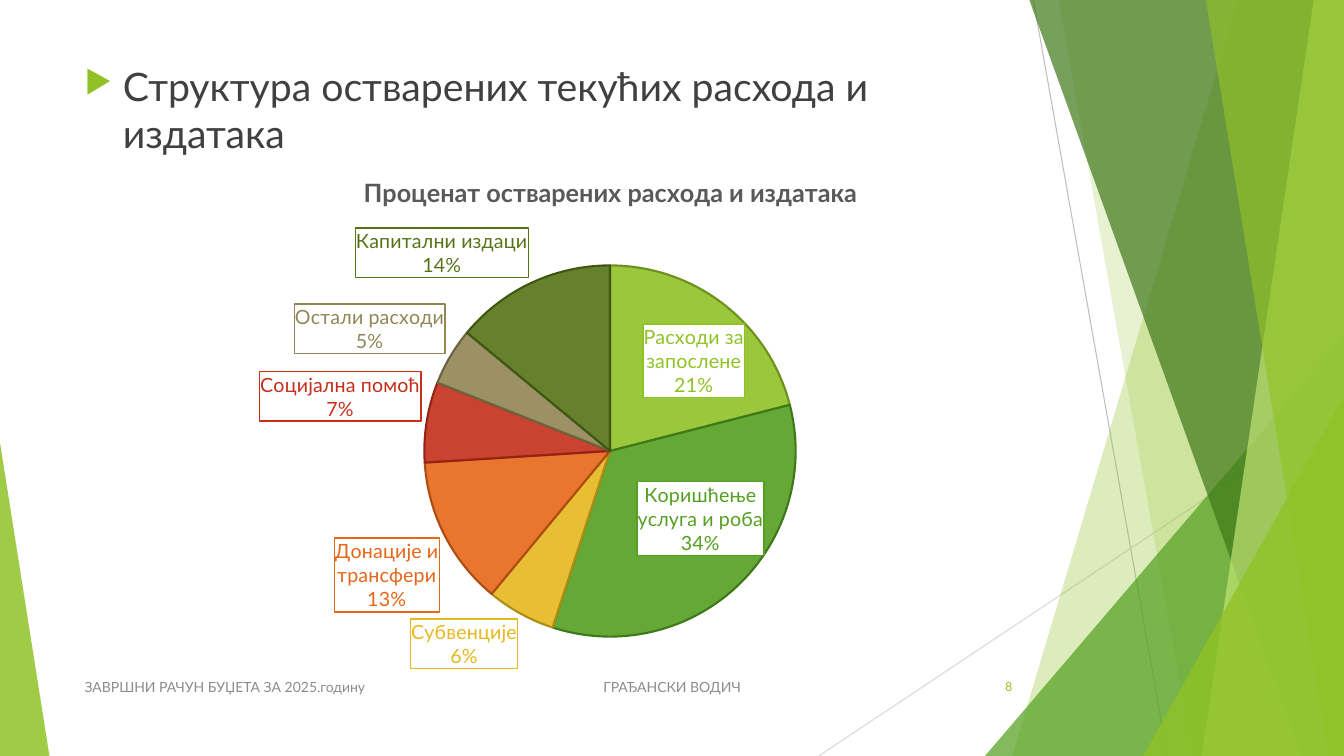
from pptx import Presentation
from pptx.chart.data import CategoryChartData
from pptx.dml.color import RGBColor
from pptx.enum.chart import XL_CHART_TYPE
from pptx.enum.shapes import MSO_CONNECTOR, MSO_SHAPE
from pptx.enum.text import MSO_ANCHOR, MSO_AUTO_SIZE, PP_ALIGN
from pptx.oxml import parse_xml
from pptx.oxml.ns import nsdecls, qn
from pptx.util import Inches, Pt
from lxml import etree

PIE = XL_CHART_TYPE.PIE
STRAIGHT = MSO_CONNECTOR.STRAIGHT
TRIANGLE = MSO_SHAPE.ISOSCELES_TRIANGLE
LEFT, RIGHT = PP_ALIGN.LEFT, PP_ALIGN.RIGHT
TOP, MIDDLE = MSO_ANCHOR.TOP, MSO_ANCHOR.MIDDLE
NO_AUTOFIT = MSO_AUTO_SIZE.NONE

WIDTH, HEIGHT = Inches(13.33), Inches(7.5)
FONT = "Lato"
COLORS = {
    "lime": "90C226", "green": "54A021", "forest": "3F7819", "pale": "C0E474",
    "yellow": "E6B91E", "orange": "E76618", "red": "C42F1A", "khaki": "918655",
    "olive": "567417", "heading": "404040", "chart title": "595959",
    "footer": "8C8C8C", "thin line": "BFBFBF", "faint line": "D9D9D9",
}
# Category, percentage, colour, label position, label shift as shares of the chart
EXPENSES = [
    ("Расходи за запослене", 21, "lime", "ctr", (0.03, -0.03)),
    ("Коришћење услуга и роба", 34, "green", "ctr", (0.03, 0)),
    ("Субвенције", 6, "yellow", "outEnd", (0, 0)),
    ("Донације и трансфери", 13, "orange", "outEnd", (0, 0)),
    ("Социјална помоћ", 7, "red", "outEnd", (0, 0)),
    ("Остали расходи", 5, "khaki", "outEnd", (0, 0)),
    ("Капитални издаци", 14, "olive", "outEnd", (0, 0)),
]


def across(percent):
    return round(WIDTH * percent / 100)


def down(percent):
    return round(HEIGHT * percent / 100)


def area(left, top, width, height):
    """Turn percentages of the slide into a position and a size."""
    return across(left), down(top), across(width), down(height)


def rgb(name):
    return RGBColor.from_string(COLORS[name])


def set_fill(fill, color, opacity):
    fill.solid()
    fill.fore_color.rgb = rgb(color)
    solid = fill._xPr.find(qn("a:solidFill"))
    etree.SubElement(solid[0], qn("a:alpha"), val=str(opacity * 1000))


def style_facet(shape, color, opacity):
    shape.shadow.inherit = False
    set_fill(shape.fill, color, opacity)
    shape.line.fill.background()


def add_line(page, start, end, color):
    line = page.shapes.add_connector(
        STRAIGHT, across(start[0]), down(start[1]), across(end[0]), down(end[1]))
    line.line.color.rgb = rgb(color)
    line.line.width = Pt(0.75)
    etree.SubElement(line._element.spPr, qn("a:effectLst"))


def add_band(page, top_left, bottom_left, color, opacity):
    """Draw a full-height band that reaches the right edge of the slide."""
    builder = page.shapes.build_freeform(across(top_left), 0)
    builder.add_line_segments(
        [(WIDTH, 0), (WIDTH, HEIGHT), (across(bottom_left), HEIGHT)], close=True)
    style_facet(builder.convert_to_shape(), color, opacity)


def add_triangle(page, place, apex, color, opacity):
    triangle = page.shapes.add_shape(TRIANGLE, *area(*place))
    triangle.adjustments[0] = apex
    style_facet(triangle, color, opacity)


def add_decoration(page):
    add_line(page, (76.89, 0), (86.87, 100), "thin line")
    add_line(page, (100, 53.73), (60.92, 100), "faint line")
    add_band(page, 92.12, 75.32, "lime", 30)
    add_band(page, 78.77, 88.75, "lime", 20)
    add_triangle(page, (73.29, 44.4, 26.71, 55.6), 1, "green", 72)
    add_band(page, 76.59, 96.85, "forest", 70)
    add_band(page, 97.75, 89.42, "pale", 70)
    add_band(page, 89.72, 98.87, "lime", 65)
    add_triangle(page, (85.07, 52.4, 14.93, 47.6), 1, "lime", 80)
    add_triangle(page, (0, 58.53, 3.68, 41.47), 0, "lime", 85)


def style_font(font, size, color, bold=False):
    font.name, font.size, font.bold = FONT, Pt(size), bold
    font.color.rgb = rgb(color)


def write_heading(page, text):
    title = page.shapes.title
    title.left, title.top, title.width, title.height = area(5.55, 7.6, 70.52, 80.53)
    frame = title.text_frame
    frame.text = text
    frame.auto_size, frame.vertical_anchor = NO_AUTOFIT, TOP
    para = frame.paragraphs[0]
    para.alignment = LEFT
    properties = para._p.get_or_add_pPr()
    indent = Inches(0.38)
    properties.set("marL", str(indent))
    properties.set("indent", str(-indent))
    color = etree.SubElement(properties, qn("a:buClr"))
    etree.SubElement(color, qn("a:srgbClr"), val=COLORS["lime"])
    etree.SubElement(properties, qn("a:buSzPct"), val="80000")
    etree.SubElement(properties, qn("a:buChar"), char="▶")
    style_font(para.font, 28, "heading")


def add_small_text(page, place, text, size, color, alignment=LEFT, tab=None):
    box = page.shapes.add_textbox(*area(*place))
    frame = box.text_frame
    frame.word_wrap, frame.vertical_anchor = True, MIDDLE
    para = frame.paragraphs[0]
    para.text, para.alignment = text, alignment
    if tab:
        tabs = etree.SubElement(para._p.get_or_add_pPr(), qn("a:tabLst"))
        etree.SubElement(tabs, qn("a:tab"), pos=str(across(tab)), algn="l")
    style_font(para.font, size, color)


def layout_xml(x, y, size=None):
    """Describe a chart layout; with a size it is the inner plot area."""
    target = modes = extent = ""
    if size:
        target = '<c:layoutTarget val="inner"/>'
        extent = f'<c:w val="{size[0]}"/><c:h val="{size[1]}"/>'
    if size or x > 0.1:
        modes = '<c:xMode val="edge"/><c:yMode val="edge"/>'
    return (f'<c:layout {nsdecls("c")}><c:manualLayout>{target}{modes}'
            f'<c:x val="{x}"/><c:y val="{y}"/>{extent}</c:manualLayout></c:layout>')


def label_xml(index, color, position, shift):
    paint = f'<a:solidFill><a:srgbClr val="{COLORS[color]}"/></a:solidFill>'
    layout = layout_xml(*shift) if any(shift) else ""
    return f'''<c:dLbl><c:idx val="{index}"/>{layout}
      <c:spPr><a:solidFill><a:srgbClr val="FFFFFF"/></a:solidFill>
        <a:ln w="12700">{paint}</a:ln></c:spPr>
      <c:txPr><a:bodyPr wrap="square"/><a:p><a:pPr><a:defRPr sz="1400" b="0">{paint}
        <a:latin typeface="{FONT}"/></a:defRPr></a:pPr></a:p></c:txPr>
      <c:dLblPos val="{position}"/>{LABEL_CONTENT}</c:dLbl>'''


LABEL_CONTENT = '''<c:showLegendKey val="0"/><c:showVal val="0"/>
  <c:showCatName val="1"/><c:showSerName val="0"/><c:showPercent val="1"/>
  <c:showBubbleSize val="0"/><c:separator>\n</c:separator>'''


def replace_layout(parent, layout, before):
    for old in parent.findall(qn("c:layout")):
        parent.remove(old)
    parent.find(qn(before)).addprevious(parse_xml(layout))


def add_expense_pie(page):
    data = CategoryChartData()
    data.categories = [expense[0] for expense in EXPENSES]
    data.add_series("Series 1", [expense[1] for expense in EXPENSES])
    chart = page.shapes.add_chart(PIE, *area(9.38, 18, 66.69, 74.4), data).chart
    chart.has_legend = False
    style_font(chart.font, 10, "heading")
    chart.chart_title.text_frame.text = "Проценат остварених расхода и издатака"
    style_font(chart.chart_title.text_frame.paragraphs[0].font, 18, "chart title", True)
    replace_layout(chart.chart_title._element, layout_xml(0.26, 0.06), "c:overlay")
    plot = chart.plots[0]
    plot.vary_by_categories = True
    replace_layout(plot._element.getparent(),
                   layout_xml(0.33, 0.23, (0.42, 0.66)), "c:pieChart")
    series = plot.series[0]
    labels = ""
    for index, (_, _, color, position, shift) in enumerate(EXPENSES):
        slice_format = series.points[index].format
        set_fill(slice_format.fill, color, 90)
        slice_format.line.width = Pt(1.5)
        slice_format.line.color.rgb = rgb(color)
        slice_format.line.color.brightness = -0.25
        labels += label_xml(index, color, position, shift)
    series._element.find(qn("c:cat")).addprevious(parse_xml(
        f'<c:dLbls {nsdecls("c", "a")}>{labels}{LABEL_CONTENT}</c:dLbls>'))


def main():
    deck = Presentation()
    deck.slide_width, deck.slide_height = WIDTH, HEIGHT
    page = deck.slides.add_slide(deck.slide_layouts[5])
    add_decoration(page)
    write_heading(page, "Структура остварених текућих расхода и издатака")
    add_small_text(page, (70.44, 88.13, 5.63, 5.33), "8", 9, "lime", RIGHT)
    add_small_text(page, (5.55, 88.13, 51.69, 5.33),
                   "ЗАВРШНИ РАЧУН БУЏЕТА ЗА 2025.годину\tГРАЂАНСКИ ВОДИЧ",
                   10, "footer", tab=38.6)
    add_expense_pie(page)
    deck.save("out.pptx")


if __name__ == "__main__":
    main()
